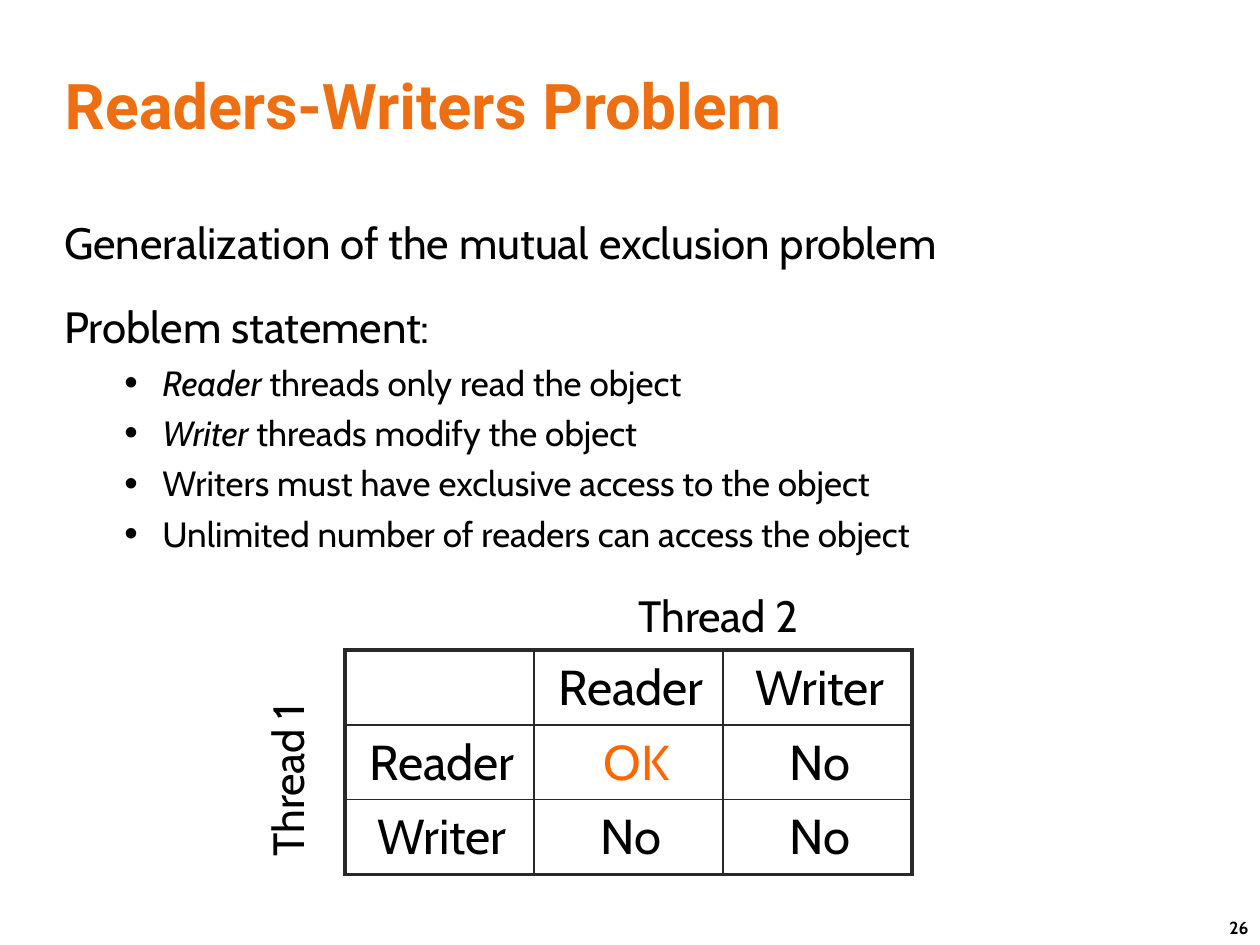
import pptx
import pptx.util
import pptx.dml.color
import pptx.enum.text
import pptx.oxml
import pptx.oxml.ns

HUES = {"title": "EE6E12", "text": "000000", "ok": "FF6600", "rule": "292929"}
ALIGN = pptx.enum.text.PP_ALIGN
ANCHOR = pptx.enum.text.MSO_ANCHOR


def px(n):
    return pptx.util.Emu(round(n * 914400 / 126))


def style(font, size, hue="text", name="Cabin", bold=False):
    font.name, font.size, font.bold = name, pptx.util.Pt(size), bold
    font.color.rgb = pptx.dml.color.RGBColor.from_string(HUES[hue])


def add_xml(parent, tag, attrs):
    node = pptx.oxml.parse_xml(f'<a:{tag} {pptx.oxml.ns.nsdecls("a")} {attrs}/>')
    parent.append(node)
    return node


def add_title(slide, box, text):
    shape = slide.shapes.title
    shape.left, shape.top, shape.width, shape.height = map(px, box)
    frame = shape.text_frame
    frame.text = text
    frame.vertical_anchor = ANCHOR.MIDDLE
    para = frame.paragraphs[0]
    para.alignment = ALIGN.LEFT
    style(para.font, 36, "title", "Roboto", True)


def add_label(slide, box, text, size=25, bold=False, turn=0):
    shape = slide.shapes.add_textbox(*map(px, box))
    shape.rotation = turn
    frame = shape.text_frame
    frame.word_wrap = False
    frame.auto_size = pptx.enum.text.MSO_AUTO_SIZE.SHAPE_TO_FIT_TEXT
    frame.text = text
    style(frame.paragraphs[0].font, size, bold=bold)


def add_body(slide, box, heads, points):
    frame = slide.shapes.add_textbox(*map(px, box)).text_frame
    frame.word_wrap = True
    lines = [("", head, False) for head in heads]
    lines += [(lead, rest, True) for lead, rest in points]
    for i, (lead, rest, bullet) in enumerate(lines):
        para = frame.paragraphs[0] if i == 0 else frame.add_paragraph()
        para.space_before = pptx.util.Pt(4.8 if bullet else 18)
        style(para.font, 20 if bullet else 25)
        if lead:
            run = para.add_run()
            run.text = lead
            run.font.italic = True
        para.add_run().text = rest
        if bullet:
            para.level = 1
            props = para._p.get_or_add_pPr()
            props.set("marL", str(px(98)))
            props.set("indent", str(-px(38)))
            # Bullet nodes come before the default run properties
            marks = [add_xml(props, "buSzPct", 'val="110000"'),
                     add_xml(props, "buFont", 'typeface="Arial"'),
                     add_xml(props, "buChar", 'char="•"')]
            for mark in marks:
                props.find(pptx.oxml.ns.qn("a:defRPr")).addprevious(mark)


def add_rules(cell, edges):
    props = cell._tc.get_or_add_tcPr()
    for side, outer in edges.items():
        width = pptx.util.Pt(2.25 if outer else 1)
        line = add_xml(props, f"ln{side}", f'w="{width}"')
        fill = add_xml(line, "solidFill", "")
        add_xml(fill, "srgbClr", f'val="{HUES["rule"]}"')


def add_grid(slide, box, rows):
    last_row, last_col = len(rows) - 1, len(rows[0]) - 1
    table = slide.shapes.add_table(len(rows), len(rows[0]), *map(px, box)).table
    table.first_row = table.horz_banding = False
    for r, row in enumerate(rows):
        for c, text in enumerate(row):
            cell = table.cell(r, c)
            cell.margin_left = cell.margin_right = px(8)
            cell.margin_top = cell.margin_bottom = px(8)
            add_rules(cell, {"L": c == 0, "R": c == last_col,
                             "T": r == 0, "B": r == last_row})
            cell.fill.background()
            cell.text = text
            para = cell.text_frame.paragraphs[0]
            para.alignment = ALIGN.CENTER
            para._p.get_or_add_pPr().set("marL", str(px(5)))
            style(para.font, 28, "ok" if "OK" in text else "text")


def add_matrix(slide, box):
    left, top, width, height = box
    add_grid(slide, box, [["", "Reader", "Writer"],
                          ["Reader", " OK", "No"],
                          ["Writer", "No", "No"]])
    add_label(slide, (left - 151, top + 92, 188, 66), "Thread 1", turn=270)
    add_label(slide, (left + 281, top - 67, 188, 66), "Thread 2")


def main():
    deck = pptx.Presentation()
    deck.slide_width, deck.slide_height = px(1260), px(945)
    slide = deck.slides.add_slide(deck.slide_layouts[5])

    # Heading and page number
    add_title(slide, (52, 52, 1155, 105), "Readers-Writers Problem")
    add_label(slide, (1217, 911, 47, 34), "26", 10, True)

    # Problem statement
    add_body(slide, (52, 210, 1155, 683),
             ["Generalization of the mutual exclusion problem",
              "Problem statement:"],
             [("Reader", " threads only read the object"),
              ("Writer", " threads modify the object"),
              ("", "Writers must have exclusive access to the object"),
              ("", "Unlimited number of readers can access the object")])

    # Which pairs of threads may run together
    add_matrix(slide, (345, 650, 567, 219))
    deck.save("out.pptx")


if __name__ == "__main__":
    main()
